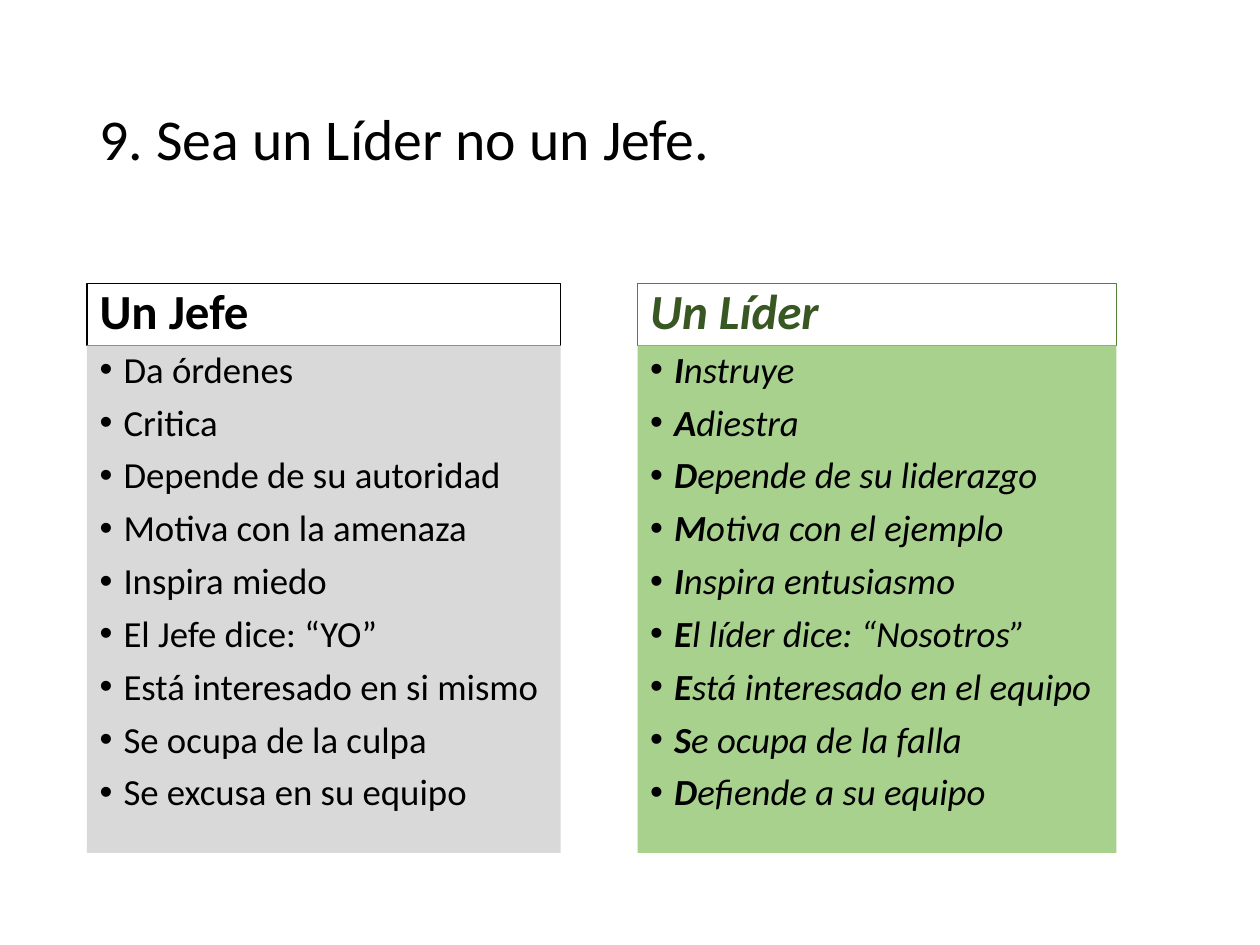
import pptx
import pptx.dml.color
import pptx.enum.text
import pptx.oxml.ns
import pptx.util
from lxml import etree
from pptx.util import Inches

FONT = "Calibri"
BLACK = "000000"
HEADING_HEIGHT = Inches(0.49)
INDENT = Inches(0.19)

BOSS_TRAITS = [
    "Da órdenes",
    "Critica",
    "Depende de su autoridad",
    "Motiva con la amenaza",
    "Inspira miedo",
    "El Jefe dice: “YO”",
    "Está interesado en si mismo",
    "Se ocupa de la culpa",
    "Se excusa en su equipo",
]
LEADER_TRAITS = [
    "Instruye",
    "Adiestra",
    "Depende de su liderazgo",
    "Motiva con el ejemplo",
    "Inspira entusiasmo",
    "El líder dice: “Nosotros”",
    "Está interesado en el equipo",
    "Se ocupa de la falla",
    "Defiende a su equipo",
]


def color(hex_string):
    return pptx.dml.color.RGBColor.from_string(hex_string)


def place(shape, left, top, width, height, anchor):
    shape.left, shape.top, shape.width, shape.height = left, top, width, height
    frame = shape.text_frame
    frame.word_wrap = True
    frame.auto_size = pptx.enum.text.MSO_AUTO_SIZE.NONE
    frame.vertical_anchor = anchor
    return frame


def format_paragraph(paragraph, line_spacing, space_before):
    paragraph.alignment = pptx.enum.text.PP_ALIGN.LEFT
    paragraph.line_spacing = line_spacing
    paragraph.space_before = pptx.util.Pt(space_before)
    paragraph.space_after = pptx.util.Pt(0)


def add_run(paragraph, text, size, hex_string=BLACK, bold=False, italic=False):
    run = paragraph.add_run()
    run.text = text
    run.font.name = FONT
    run.font.size = pptx.util.Pt(size)
    run.font.color.rgb = color(hex_string)
    run.font.bold = bold
    run.font.italic = italic


def add_bullet(paragraph):
    properties = paragraph._p.get_or_add_pPr()
    properties.set("marL", str(INDENT))
    properties.set("indent", str(-INDENT))
    qualified = pptx.oxml.ns.qn
    etree.SubElement(properties, qualified("a:buFont"), typeface="Arial")
    etree.SubElement(properties, qualified("a:buChar"), char="•")


def fill_title(shape, text, left, top, width, height):
    frame = place(shape, left, top, width, height, pptx.enum.text.MSO_ANCHOR.MIDDLE)
    paragraph = frame.paragraphs[0]
    format_paragraph(paragraph, 0.9, 0)
    add_run(paragraph, text, 33)


def fill_heading(shape, text, left, top, width, hex_string, line, italic):
    frame = place(shape, left, top, width, HEADING_HEIGHT,
                  pptx.enum.text.MSO_ANCHOR.BOTTOM)
    shape.line.color.rgb = color(line)
    shape.line.width = pptx.util.Pt(0.75)
    paragraph = frame.paragraphs[0]
    format_paragraph(paragraph, 0.8, 7.5)
    add_run(paragraph, text, 28, hex_string, bold=True, italic=italic)


def fill_traits(shape, traits, left, top, width, height, fill, emphasized):
    """List the traits; emphasized ones are italic with a bold initial."""
    frame = place(shape, left, top, width, height, pptx.enum.text.MSO_ANCHOR.TOP)
    shape.fill.solid()
    shape.fill.fore_color.rgb = color(fill)
    for index, trait in enumerate(traits):
        paragraph = frame.add_paragraph() if index else frame.paragraphs[0]
        format_paragraph(paragraph, 0.9, 7.5)
        add_bullet(paragraph)
        if emphasized:
            add_run(paragraph, trait[0], 21, bold=True, italic=True)
            add_run(paragraph, trait[1:], 21, italic=True)
        else:
            add_run(paragraph, trait, 21)


def fill_column(heading_shape, list_shape, box, heading, traits,
                heading_color, line, fill, emphasized=False):
    left, top, width, height = box
    fill_heading(heading_shape, heading, left, top, width,
                 heading_color, line, emphasized)
    fill_traits(list_shape, traits, left, top + HEADING_HEIGHT, width,
                height - HEADING_HEIGHT, fill, emphasized)


def main():
    presentation = pptx.Presentation()
    presentation.slide_width = Inches(10)
    presentation.slide_height = Inches(7.5)
    comparison_layout = presentation.slide_layouts[4]
    slide = presentation.slides.add_slide(comparison_layout)
    title, boss_heading, boss_list, leader_heading, leader_list = slide.placeholders

    fill_title(title, "9. Sea un Líder no un Jefe.",
               Inches(0.69), Inches(0.4), Inches(8.62), Inches(1.45))
    top, height = Inches(2.25), Inches(4.52)
    fill_column(boss_heading, boss_list,
                (Inches(0.69), top, Inches(3.76), height),
                "Un Jefe", BOSS_TRAITS, BLACK, BLACK, "D9D9D9")
    fill_column(leader_heading, leader_list,
                (Inches(5.06), top, Inches(3.8), height),
                "Un Líder", LEADER_TRAITS, "385723", "548235", "A9D18E",
                emphasized=True)
    presentation.save("out.pptx")


if __name__ == "__main__":
    main()
